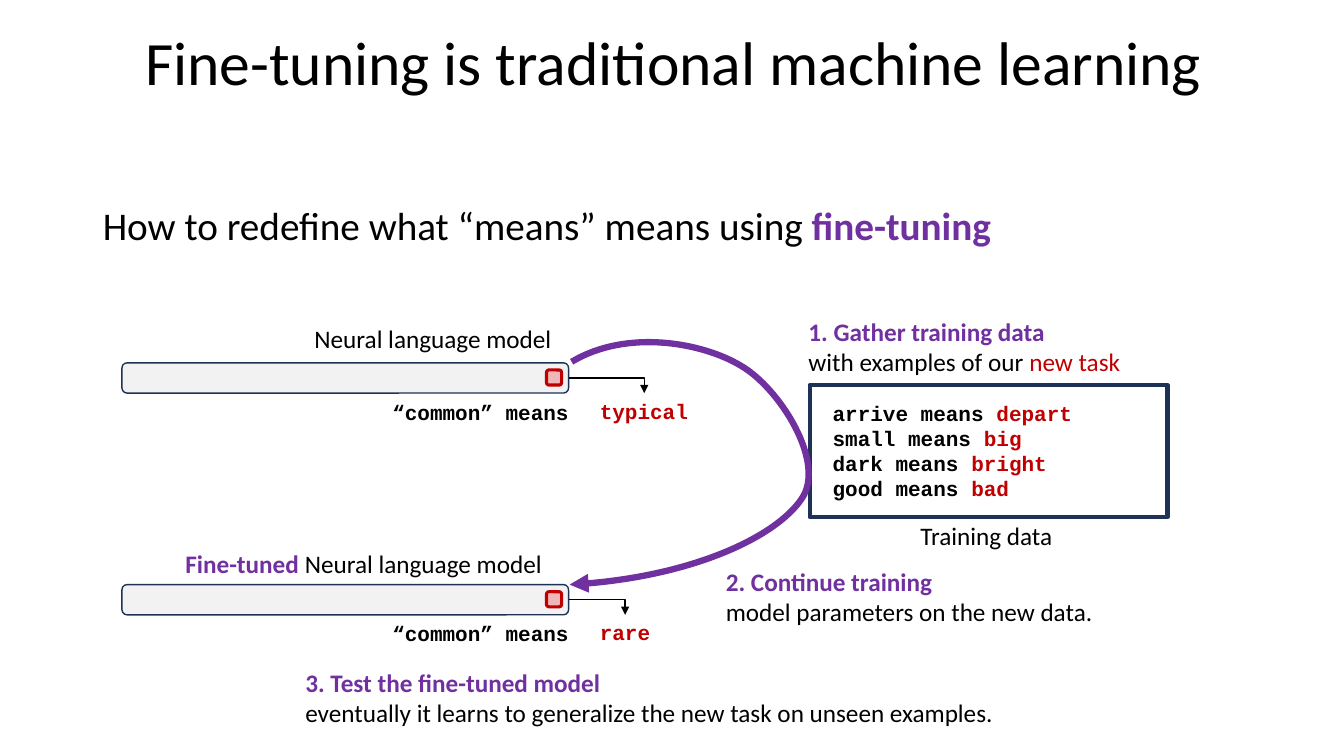
from lxml import etree
from pptx import Presentation
from pptx.dml.color import RGBColor
from pptx.enum.shapes import MSO_CONNECTOR, MSO_SHAPE
from pptx.enum.text import MSO_ANCHOR, MSO_AUTO_SIZE, PP_ALIGN
from pptx.oxml.ns import qn
from pptx.util import Inches, Pt

ELBOW = MSO_CONNECTOR.ELBOW
RECT, ROUNDED = MSO_SHAPE.RECTANGLE, MSO_SHAPE.ROUNDED_RECTANGLE
LEFT, CENTER, RIGHT = PP_ALIGN.LEFT, PP_ALIGN.CENTER, PP_ALIGN.RIGHT
TOP, MIDDLE = MSO_ANCHOR.TOP, MSO_ANCHOR.MIDDLE
NO_AUTOFIT, FIT_SHAPE = MSO_AUTO_SIZE.NONE, MSO_AUTO_SIZE.SHAPE_TO_FIT_TEXT
RIGHT_SIDE = 3

COLORS = {
    "black": "000000",
    "purple": "7030A0",
    "red": "C00000",
    "pink": "EFB7B8",
    "navy": "1E3256",
    "gray": "F2F2F2",
}
SANS, MONO = "Calibri", "Courier New"
BAR_LEFT, BAR_WIDTH, BAR_HEIGHT = 1.21, 4.43, 0.3


def rgb(color):
    return RGBColor.from_string(COLORS[color])


def place(shape, left, top, width, height):
    shape.left, shape.top = Inches(left), Inches(top)
    shape.width, shape.height = Inches(width), Inches(height)


def write_runs(paragraph, runs, size, font=SANS, bold_colors=("purple",)):
    """Add (text, color) runs; a text of "\\n" is a line break."""
    for text, color in runs:
        if text == "\n":
            paragraph.add_line_break()
            continue
        run = paragraph.add_run()
        run.text = text
        run.font.name, run.font.size = font, Pt(size)
        run.font.bold = font == MONO or color in bold_colors
        run.font.color.rgb = rgb(color)


def fill_placeholder(placeholder, box, runs, size, align, anchor):
    place(placeholder, *box)
    frame = placeholder.text_frame
    frame.auto_size, frame.vertical_anchor = NO_AUTOFIT, anchor
    paragraph = frame.paragraphs[0]
    properties = paragraph._p.get_or_add_pPr()
    properties.set("marL", "0")
    properties.set("indent", "0")
    etree.SubElement(properties, qn("a:buNone"))
    paragraph.alignment, paragraph.line_spacing = align, 0.9
    paragraph.space_before = Pt(0)
    write_runs(paragraph, runs, size)


def add_label(slide, box, paragraphs, size=18, font=SANS, align=LEFT):
    label = slide.shapes.add_textbox(*map(Inches, box))
    frame = label.text_frame
    frame.word_wrap, frame.auto_size = False, FIT_SHAPE
    for index, runs in enumerate(paragraphs):
        paragraph = frame.add_paragraph() if index else frame.paragraphs[0]
        paragraph.alignment = align
        write_runs(paragraph, runs, size, font)


def add_box(slide, kind, box, line_color, line_width, fill=None):
    shape = slide.shapes.add_shape(kind, *map(Inches, box))
    shape.shadow.inherit = False
    if fill:
        shape.fill.solid()
        shape.fill.fore_color.rgb = rgb(fill)
    else:
        shape.fill.background()
    shape.line.color.rgb, shape.line.width = rgb(line_color), Pt(line_width)
    return shape


def style_arrow(arrow, color, width):
    arrow.line.color.rgb, arrow.line.width = rgb(color), Pt(width)
    etree.SubElement(arrow.line._get_or_add_ln(), qn("a:tailEnd"), type="triangle")


def add_model(slide, top, prediction, prediction_width, arrow_x):
    """Draw a model bar with its prompt, last token and predicted word."""
    bar = add_box(slide, ROUNDED, (BAR_LEFT, top, BAR_WIDTH, BAR_HEIGHT), "navy", 1, "gray")
    add_box(slide, ROUNDED, (5.42, top + 0.07, 0.15, 0.15), "red", 2.25, "pink")
    add_label(slide, (3.77, top + 0.31, 1.97, 0.35), [[("“common” means", "black")]],
              15, MONO, RIGHT)
    add_label(slide, (5.85, top + 0.3, prediction_width, 0.35), [[(prediction, "red")]],
              15, MONO)
    arrow = slide.shapes.add_connector(
        ELBOW, Inches(BAR_LEFT + BAR_WIDTH), Inches(top + BAR_HEIGHT / 2),
        Inches(arrow_x), Inches(top + BAR_HEIGHT))
    arrow.begin_connect(bar, RIGHT_SIDE)
    arrow._element.spPr.find(qn("a:prstGeom")).set("prst", "bentConnector2")
    style_arrow(arrow, "black", 1)
    etree.SubElement(arrow._element.spPr, qn("a:effectLst"))


def add_curved_arrow(slide, points, color, width):
    """Draw Bézier segments: a start, then two controls and an end for each."""
    start, *others = [(Inches(x), Inches(y)) for x, y in points]
    builder = slide.shapes.build_freeform(*start)
    builder.add_line_segments(others, close=False)
    curve = builder.convert_to_shape()
    curve_path = next(curve._element.iter(qn("a:path")))
    lines = curve_path.findall(qn("a:lnTo"))
    for first in range(0, len(lines), 3):
        bezier = etree.SubElement(curve_path, qn("a:cubicBezTo"))
        for line in lines[first:first + 3]:
            bezier.append(line[0])
            curve_path.remove(line)
    curve.shadow.inherit = False
    curve.fill.background()
    style_arrow(curve, color, width)


def add_training_data(slide):
    examples = [("arrive", "depart"), ("small", "big"), ("dark", "bright"), ("good", "bad")]
    runs = []
    for word, meaning in examples:
        if runs:
            runs.append(("\n", "red"))
        runs += [(f"{word} means ", "black"), (meaning, "red")]
    add_label(slide, (8.16, 3.92, 2.6, 1.11), [runs], 15, MONO)
    add_label(slide, (7.92, 3.09, 3.46, 0.71), [
        [("1. Gather training data", "purple")],
        [("with examples of our ", "black"), ("new task", "red")],
    ])
    add_box(slide, RECT, (8.03, 3.82, 3.55, 1.31), "navy", 3)
    add_label(slide, (9.03, 5.11, 1.58, 0.4), [[("Training data", "black")]])


def add_step(slide, box, heading, detail):
    add_label(slide, box, [[(heading, "purple"), ("\n", "black"), (detail, "black")]])


def main():
    prs = Presentation()
    prs.slide_width, prs.slide_height = Inches(13.33), Inches(7.5)
    slide = prs.slides.add_slide(prs.slide_layouts[1])

    fill_placeholder(slide.shapes.title, (0.02, 0.02, 13.33, 1.27),
                     [("Fine-tuning is traditional machine learning", "black")],
                     44, CENTER, MIDDLE)
    fill_placeholder(slide.placeholders[1], (0.92, 2, 11.5, 0.63),
                     [("How to redefine what “means” means using ", "black"),
                      ("fine-tuning", "purple")], 28, LEFT, TOP)

    add_model(slide, 3.6, "typical", 1.09, 6.39)
    add_label(slide, (3.02, 3.16, 2.72, 0.4), [[("Neural language model", "black")]])
    add_model(slide, 5.8, "rare", 0.71, 6.2)
    add_label(slide, (1.74, 5.39, 4.01, 0.4),
              [[("Fine-tuned ", "purple"), ("Neural language model", "black")]])

    add_training_data(slide)
    add_curved_arrow(slide, [
        (5.67, 3.59),
        (6.22, 3.26), (6.97, 3.4), (7.35, 3.63),
        (7.73, 3.85), (8.2, 4.59), (7.95, 4.95),
        (7.7, 5.32), (6.82, 5.74), (5.65, 5.8),
    ], "purple", 4.5)
    add_step(slide, (7.1, 5.57, 4.05, 0.71), "2. Continue training",
             "model parameters on the new data.")
    add_step(slide, (2.93, 6.57, 7.44, 0.71), "3. Test the fine-tuned model",
             "eventually it learns to generalize the new task on unseen examples.")

    prs.save("out.pptx")


if __name__ == "__main__":
    main()
